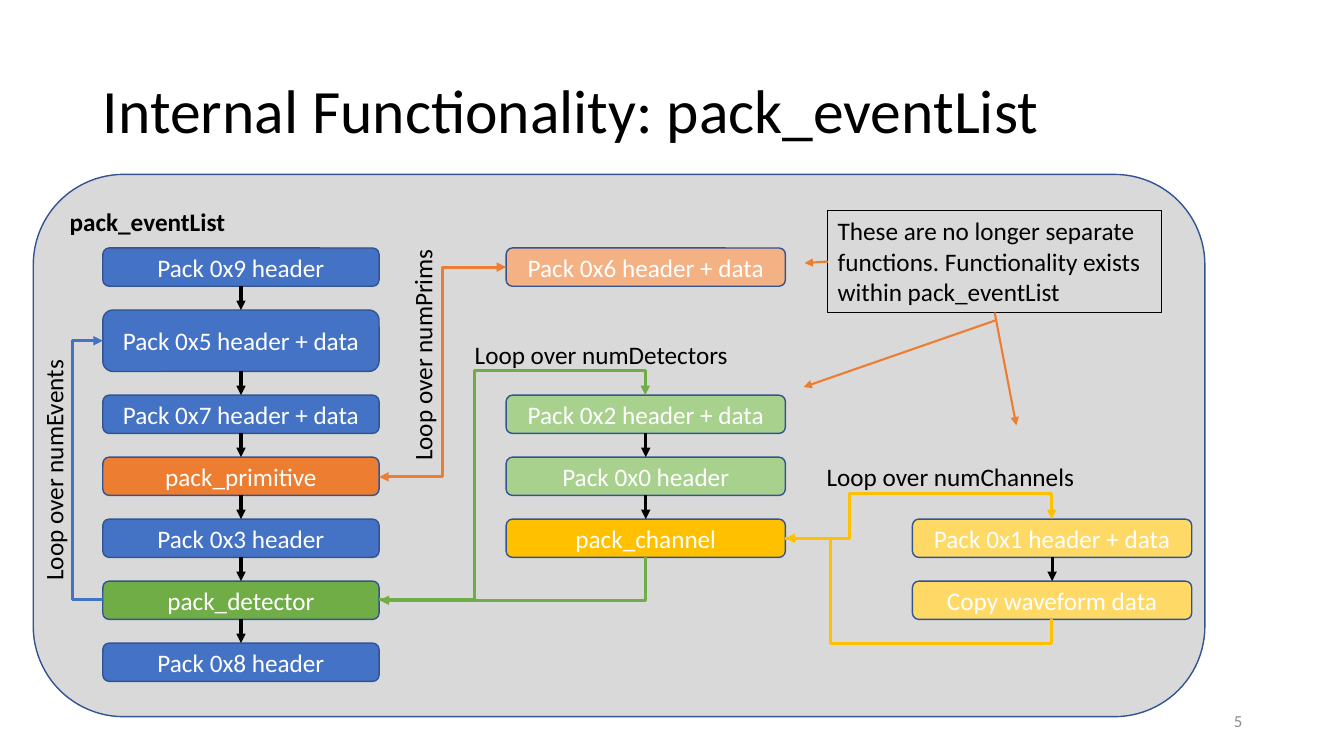
from dataclasses import dataclass

from lxml.etree import SubElement
from pptx import Presentation
from pptx.dml.color import RGBColor
from pptx.enum.shapes import MSO_CONNECTOR, MSO_SHAPE
from pptx.enum.text import MSO_ANCHOR, PP_ALIGN
from pptx.oxml.ns import qn
from pptx.shapes.autoshape import Shape
from pptx.shapes.connector import Connector
from pptx.slide import Slide
from pptx.util import Inches, Pt

COLORS = {
    "black": "000000", "white": "FFFFFF", "panel": "D9D9D9", "outline": "325491",
    "blue": "4472C4", "orange": "ED7D31", "light orange": "F4B183",
    "green": "70AD47", "light green": "A9D18E",
    "gold": "FFC000", "light gold": "FFD966", "number": "8C8C8C",
}
FONT = "Calibri"
BOX_HEIGHT = 0.38
ROW_PITCH = 2.46 / 4
TALL_ROW, TALL_EXTRA = 1, 0.23


@dataclass
class Step:
    text: str
    row: int
    color: str


@dataclass
class Column:
    left: float
    width: float
    steps: list[Step]


@dataclass
class Loop:
    frame: tuple[float, float, float, float]
    color: str
    preset: str
    adjustments: tuple[float, ...] = ()
    rotation: int = 0
    flip: str = ""
    both_ends: bool = False


@dataclass
class Label:
    text: str
    frame: tuple[float, float, float, float]
    rotation: int = 0


COLUMNS = [
    Column(1.02, 2.74, [
        Step("Pack 0x9 header", 0, "blue"),
        Step("Pack 0x5 header + data", 1, "blue"),
        Step("Pack 0x7 header + data", 2, "blue"),
        Step("pack_primitive", 3, "orange"),
        Step("Pack 0x3 header", 4, "blue"),
        Step("pack_detector", 5, "green"),
        Step("Pack 0x8 header", 6, "blue"),
    ]),
    Column(5.02, 2.77, [Step("Pack 0x6 header + data", 0, "light orange")]),
    Column(5.02, 2.77, [
        Step("Pack 0x2 header + data", 2, "light green"),
        Step("Pack 0x0 header", 3, "light green"),
        Step("pack_channel", 4, "gold"),
    ]),
    Column(9.05, 2.77, [
        Step("Pack 0x1 header + data", 4, "light gold"),
        Step("Copy waveform data", 5, "light gold"),
    ]),
]
LOOPS = [
    Loop((3.76, 3.92, 2.64, 2.03), "green", "bentConnector4", (0.36, 1.12), flip="flipV"),
    Loop((7.79, 5.15, 2.64, 0.19), "gold", "bentConnector4", (0.24, 2.32), flip="flipV"),
    Loop((3.76, 2.65, 1.26, 2.08), "orange", "bentConnector3", (0.5,), 180, "flipV", True),
    Loop((8.71, 4.42, 0.8, 2.64), "gold", "bentConnector4", (-0.31, 0.83), 90, "flipH"),
    Loop((4.87, 4.42, 0.43, 2.64), "green", "bentConnector2", rotation=90),
    Loop((1.02, 3.38, 0.01, 2.57), "blue", "bentConnector3", (32,), 180),
]
LABELS = [
    Label("Loop over numPrims", (3.02, 3.3, 2.34, 0.4), 270),
    Label("Loop over numDetectors", (4.61, 3.32, 2.85, 0.4)),
    Label("Loop over numChannels", (8.1, 4.53, 2.85, 0.4)),
    Label("Loop over numEvents", (-0.74, 4.39, 2.54, 0.4), 270),
]


def rgb(name: str) -> RGBColor:
    return RGBColor.from_string(COLORS[name])


def write(box: Shape, text: str, size: int = 18, color: str = "black",
          align: PP_ALIGN = PP_ALIGN.LEFT, anchor: MSO_ANCHOR = MSO_ANCHOR.TOP) -> None:
    frame = box.text_frame
    frame.word_wrap = True
    frame.vertical_anchor = anchor
    para = frame.paragraphs[0]
    para.text = text
    para.alignment = align
    para.font.name = FONT
    para.font.size = Pt(size)
    para.font.color.rgb = rgb(color)


def add_round_box(page: Slide, frame: tuple[float, float, float, float], color: str) -> Shape:
    box = page.shapes.add_shape(MSO_SHAPE.ROUNDED_RECTANGLE, *map(Inches, frame))
    box.shadow.inherit = False
    box.fill.solid()
    box.fill.fore_color.rgb = rgb(color)
    box.line.color.rgb = rgb("outline")
    box.line.width = Pt(1)
    return box


def add_text_box(page: Slide, frame: tuple[float, float, float, float]) -> Shape:
    return page.shapes.add_textbox(*map(Inches, frame))


def style_arrow(arrow: Connector, color: str, width: float, both_ends: bool = False) -> None:
    arrow.line.color.rgb = rgb(color)
    arrow.line.width = Pt(width)
    properties = arrow.element.spPr
    line = properties.find(qn("a:ln"))
    for end in ("a:headEnd", "a:tailEnd") if both_ends else ("a:tailEnd",):
        SubElement(line, qn(end)).set("type", "triangle")
    SubElement(properties, qn("a:effectLst"))


def add_arrow(page: Slide, start: tuple[float, float], end: tuple[float, float],
              color: str = "orange", width: float = 1.5) -> Connector:
    arrow = page.shapes.add_connector(MSO_CONNECTOR.STRAIGHT, *map(Inches, start + end))
    style_arrow(arrow, color, width)
    return arrow


def add_column(page: Slide, column: Column) -> None:
    above = None
    for step in column.steps:
        top = 2.46 + ROW_PITCH * step.row + (TALL_EXTRA if step.row > TALL_ROW else 0)
        height = BOX_HEIGHT + (TALL_EXTRA if step.row == TALL_ROW else 0)
        box = add_round_box(page, (column.left, top, column.width, height), step.color)
        write(box, step.text, 18, "white", PP_ALIGN.CENTER, MSO_ANCHOR.MIDDLE)
        if above is not None:
            arrow = add_arrow(page, (0, 0), (1, 1), "black", 2.25)
            arrow.begin_connect(above, 2)
            arrow.end_connect(box, 0)
        above = box


def add_loop(page: Slide, loop: Loop) -> None:
    left, top, width, height = loop.frame
    corners = (left, top, left + width, top + height)
    arrow = page.shapes.add_connector(MSO_CONNECTOR.ELBOW, *map(Inches, corners))
    properties = arrow.element.spPr
    transform = properties.find(qn("a:xfrm"))
    transform.set("rot", str(loop.rotation * 60000))
    if loop.flip:
        transform.set(loop.flip, "1")
    geometry = properties.find(qn("a:prstGeom"))
    geometry.set("prst", loop.preset)
    guides = geometry.find(qn("a:avLst"))
    for number, value in enumerate(loop.adjustments, 1):
        guide = SubElement(guides, qn("a:gd"))
        guide.set("name", f"adj{number}")
        guide.set("fmla", f"val {round(value * 100000)}")
    style_arrow(arrow, loop.color, 2.25, loop.both_ends)


def main() -> None:
    deck = Presentation()
    deck.slide_width, deck.slide_height = Inches(13.33), Inches(7.5)
    page = deck.slides.add_slide(deck.slide_layouts[5])

    # Title
    title = page.shapes.title
    title.left, title.top, title.width, title.height = map(Inches, (0.92, 0.4, 11.5, 1.45))
    write(title, "Internal Functionality: pack_eventList", 44, anchor=MSO_ANCHOR.MIDDLE)
    title.text_frame.paragraphs[0].line_spacing = 0.9

    # Panel and flow of steps
    panel = add_round_box(page, (0.33, 1.73, 11.62, 5.38), "panel")
    write(panel, "pack_eventList")
    panel.text_frame.paragraphs[0].font.bold = True
    for column in COLUMNS:
        add_column(page, column)

    # Loops and their labels
    for loop in LOOPS:
        add_loop(page, loop)
    for label in LABELS:
        box = add_text_box(page, label.frame)
        box.rotation = label.rotation
        write(box, label.text)

    # Remark with its arrows
    remark = add_text_box(page, (8.21, 2.09, 3.31, 1.01))
    remark.line.color.rgb = rgb("black")
    remark.line.width = Pt(0.75)
    write(remark, "These are no longer separate functions. "
                  "Functionality exists within pack_eventList")
    add_arrow(page, (9.87, 3.1), (10.08, 4.22)).begin_connect(remark, 2)
    add_arrow(page, (9.87, 3.18), (7.97, 3.84))
    add_arrow(page, (8.21, 2.6), (7.98, 2.61)).begin_connect(remark, 1)

    # Slide number
    number = add_text_box(page, (9.42, 6.95, 3, 0.4))
    write(number, "5", 12, "number", PP_ALIGN.RIGHT, MSO_ANCHOR.MIDDLE)

    deck.save("out.pptx")


if __name__ == "__main__":
    main()
